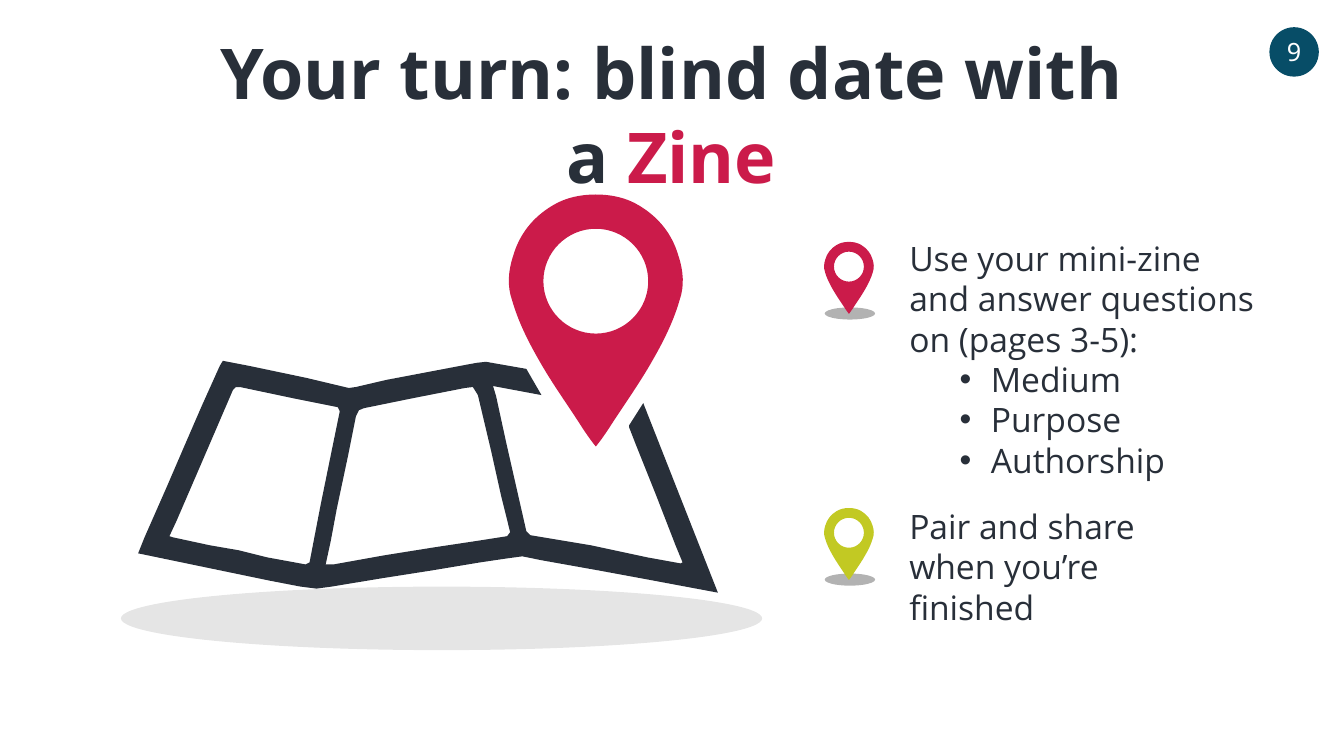
from dataclasses import dataclass

from lxml import etree
from pptx import Presentation
from pptx.dml.color import RGBColor
from pptx.enum.shapes import MSO_SHAPE
from pptx.enum.text import MSO_ANCHOR, MSO_AUTO_SIZE, PP_ALIGN
from pptx.oxml.ns import qn
from pptx.util import Inches, Pt

OVAL = MSO_SHAPE.OVAL
LEFT, CENTER = PP_ALIGN.LEFT, PP_ALIGN.CENTER
TOP, MIDDLE = MSO_ANCHOR.TOP, MSO_ANCHOR.MIDDLE
FIT_SHAPE, FIXED = MSO_AUTO_SIZE.SHAPE_TO_FIT_TEXT, MSO_AUTO_SIZE.NONE
TITLE_ONLY = 5


@dataclass(frozen=True)
class Theme:
    ink: str = "282F39"
    red: str = "CB1B4A"
    lime: str = "C2C923"
    teal: str = "074D67"
    white: str = "FFFFFF"
    shadow: str = "000000"
    heading_font: str = "Noto Sans"
    body_font: str = "Open Sans"
    title_size: int = 50
    body_size: int = 24
    badge_size: int = 18


THEME = Theme()

# Right half of the large pin: a start point, then three points per cubic curve
PIN_WIDTH = 1.75
PIN_SIDE = [
    (0, 0),
    (0.15, 0), (0.3, 0.03), (0.43, 0.11),
    (0.63, 0.23), (0.76, 0.4), (0.82, 0.61),
    (0.87, 0.76), (0.88, 0.91), (0.83, 1.05),
    (0.77, 1.26), (0.67, 1.46), (0.56, 1.65),
    (0.43, 1.88), (0.27, 2.1), (0.13, 2.32),
    (0.09, 2.38), (0.05, 2.44), (0, 2.5),
]
PIN_HOLE_Y, PIN_HOLE_RADIUS = 0.86, 0.52
CIRCLE_HANDLE = 0.55

# Folded map: outer band (open where the pin stands) and two panel openings
MAP_BAND = [
    (1.37, 5.49), (1.43, 5.34), (1.65, 4.84), (1.84, 4.4), (2, 4.03),
    (2.18, 3.63), (2.21, 3.58), (2.47, 3.63), (3.04, 3.75), (3.46, 3.85),
    (3.53, 3.84), (3.83, 3.77), (4.62, 3.62), (4.73, 3.6), (4.82, 3.59),
    (5.22, 3.66), (5.37, 3.92), (4.89, 3.83), (4.92, 3.93), (5.02, 4.39),
    (5.22, 5.27), (5.26, 5.31), (5.86, 5.41), (6.42, 5.53), (6.75, 5.59),
    (6.77, 5.58), (6.7, 5.41), (6.51, 4.92), (6.31, 4.42), (6.24, 4.24),
    (6.24, 4.22), (6.38, 4), (7.12, 5.88), (6.48, 5.76), (5.94, 5.66),
    (5.38, 5.56), (5.18, 5.52), (5.03, 5.54), (4.76, 5.58), (4.28, 5.66),
    (3.77, 5.74), (3.29, 5.82), (3.14, 5.84), (2.98, 5.82), (2.67, 5.76),
]
MAP_MIDDLE_PANEL = [
    (3.23, 5.6), (3.31, 5.6), (3.81, 5.51), (4.31, 5.43), (4.71, 5.37),
    (5.03, 5.32), (5.06, 5.28), (4.97, 4.92), (4.87, 4.47), (4.74, 3.92),
    (4.69, 3.84), (4.61, 3.85), (4.1, 3.95), (3.61, 4.05), (3.56, 4.07),
    (3.53, 4.13), (3.45, 4.53), (3.34, 5.05), (3.28, 5.37),
]
MAP_LEFT_PANEL = [
    (1.68, 5.32), (1.71, 5.33), (2.08, 5.41), (2.37, 5.46), (2.65, 5.53),
    (3.03, 5.6), (3.07, 5.58), (3.18, 5.01), (3.28, 4.52), (3.37, 4.08),
    (3.35, 4.04), (2.9, 3.95), (2.38, 3.84), (2.34, 3.84), (2.31, 3.87),
    (2.19, 4.15), (1.97, 4.66), (1.75, 5.17),
]


def paint(shape, color, opacity=None):
    """Give a shape a plain fill without line or shadow."""
    shape.shadow.inherit = False
    shape.line.fill.background()
    shape.fill.solid()
    shape.fill.fore_color.rgb = RGBColor.from_string(color)
    if opacity is not None:
        color_element = shape._element.spPr.find(".//" + qn("a:srgbClr"))
        alpha = etree.SubElement(color_element, qn("a:alpha"))
        alpha.set("val", str(opacity * 1000))


def add_ellipse(shapes, left, top, width, height, color, opacity=None):
    ellipse = shapes.add_shape(
        OVAL, Inches(left), Inches(top), Inches(width), Inches(height))
    paint(ellipse, color, opacity)
    return ellipse


def bend_lines(shape):
    """Turn every three line segments into one cubic curve."""
    lines = list(shape._element.iter(qn("a:lnTo")))
    for start in range(0, len(lines), 3):
        trio = lines[start:start + 3]
        curve = etree.Element(qn("a:cubicBezTo"))
        trio[0].addprevious(curve)
        for line in trio:
            curve.append(line[0])
            line.getparent().remove(line)


def add_outline(shapes, contours, color, curved=False):
    """Draw closed contours as one shape; inner contours become openings."""
    contours = [[(Inches(x), Inches(y)) for x, y in c] for c in contours]
    builder = shapes.build_freeform(*contours[0][0], scale=1.0)
    builder.add_line_segments(contours[0][1:], close=not curved)
    for contour in contours[1:]:
        builder.move_to(*contour[0])
        builder.add_line_segments(contour[1:], close=not curved)
    shape = builder.convert_to_shape()
    if curved:
        bend_lines(shape)
    paint(shape, color)


def add_pin(shapes, center, top, width, color):
    scale = width / PIN_WIDTH
    body = PIN_SIDE + [(-x, y) for x, y in PIN_SIDE[-2::-1]]
    # Circle from four quarter curves, each a quarter turn from the last
    circle = [(1, 0)]
    quarter = [(1, CIRCLE_HANDLE), (CIRCLE_HANDLE, 1), (0, 1)]
    for _ in range(4):
        circle += quarter
        quarter = [(-y, x) for x, y in quarter]
    hole = [(PIN_HOLE_RADIUS * x, PIN_HOLE_Y - PIN_HOLE_RADIUS * y) for x, y in circle]
    contours = [[(center + x * scale, top + y * scale) for x, y in contour]
                for contour in (body, hole)]
    add_outline(shapes, contours, color, curved=True)


def add_marker(slide, top, color):
    """Small pin standing on its shadow."""
    group = slide.shapes.add_group_shape()
    add_ellipse(group.shapes, 8.18, top + 0.65, 0.5, 0.12, THEME.shadow, opacity=30)
    add_pin(group.shapes, 8.42, top, 0.5, color)


def write_text(shape, paragraphs, *, font, size, color, bold=False, align=LEFT,
               anchor=TOP, wrap=True, auto_size=FIT_SHAPE):
    """Fill a shape with (runs, bulleted) paragraphs; a run is (text, color or None)."""
    frame = shape.text_frame
    frame.word_wrap = wrap
    frame.auto_size = auto_size
    frame.vertical_anchor = anchor
    for index, (runs, bulleted) in enumerate(paragraphs):
        paragraph = frame.add_paragraph() if index else frame.paragraphs[0]
        paragraph.alignment = align
        if bulleted:
            paragraph.level = 1
            properties = paragraph._p.get_or_add_pPr()
            properties.set("marL", str(Inches(0.81)))
            properties.set("indent", str(-Inches(0.31)))
            etree.SubElement(properties, qn("a:buFont")).set("typeface", "Arial")
            etree.SubElement(properties, qn("a:buChar")).set("char", "•")
        for text, run_color in runs:
            run = paragraph.add_run()
            run.text = text
            run.font.name = font
            run.font.size = Pt(size)
            run.font.bold = bold
            run.font.color.rgb = RGBColor.from_string(run_color or color)


def add_body(slide, left, top, width, height, line, bullets=()):
    box = slide.shapes.add_textbox(
        Inches(left), Inches(top), Inches(width), Inches(height))
    paragraphs = [([(line, None)], False)]
    paragraphs += [([(bullet, None)], True) for bullet in bullets]
    write_text(box, paragraphs, font=THEME.body_font, size=THEME.body_size,
               color=THEME.ink)


def main():
    presentation = Presentation()
    presentation.slide_width, presentation.slide_height = Inches(13.33), Inches(7.5)
    slide = presentation.slides.add_slide(presentation.slide_layouts[TITLE_ONLY])

    # Title
    title = slide.shapes.title
    title.left, title.top = Inches(1.83), Inches(0.24)
    title.width, title.height = Inches(9.66), Inches(0.94)
    write_text(title, [([("Your turn: blind date with a ", None), ("Zine", THEME.red)], False)],
               font=THEME.heading_font, size=THEME.title_size, color=THEME.ink,
               bold=True, align=CENTER)

    # Map with its large pin
    add_ellipse(slide.shapes, 1.2, 5.82, 6.36, 0.63, THEME.shadow, opacity=10)
    map_group = slide.shapes.add_group_shape()
    add_outline(map_group.shapes, [MAP_BAND, MAP_MIDDLE_PANEL, MAP_LEFT_PANEL], THEME.ink)
    add_pin(map_group.shapes, 5.91, 1.93, PIN_WIDTH, THEME.red)

    # Instructions
    add_body(slide, 8.92, 2.31, 3.77, 2.52,
             "Use your mini-zine and answer questions on (pages 3-5):",
             bullets=["Medium", "Purpose", "Authorship"])
    add_body(slide, 8.92, 4.97, 3.04, 0.91, "Pair and share when you’re finished")
    add_marker(slide, 5.04, THEME.lime)
    add_marker(slide, 2.4, THEME.red)

    # Page badge
    badge = add_ellipse(slide.shapes, 12.59, 0.27, 0.49, 0.49, THEME.teal)
    write_text(badge, [([("9", None)], False)], font=THEME.heading_font,
               size=THEME.badge_size, color=THEME.white, align=CENTER, anchor=MIDDLE,
               wrap=False, auto_size=FIXED)

    presentation.save("out.pptx")


if __name__ == "__main__":
    main()
